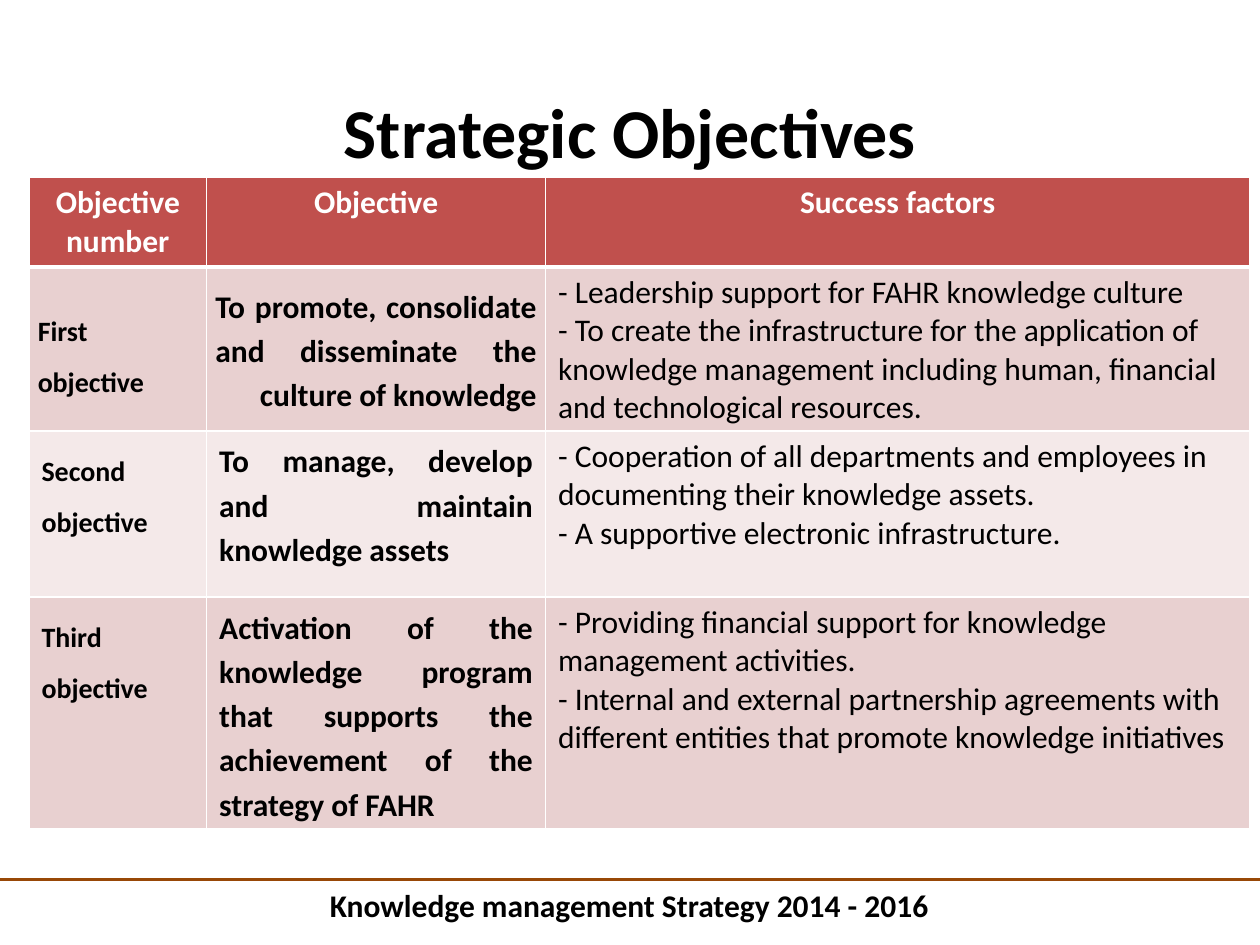
from lxml import etree
from pptx import Presentation
from pptx.dml.color import RGBColor
from pptx.enum.shapes import MSO_CONNECTOR
from pptx.enum.text import MSO_ANCHOR, MSO_AUTO_SIZE, PP_ALIGN
from pptx.oxml.ns import qn
from pptx.util import Inches, Pt

BLACK = RGBColor(0x00, 0x00, 0x00)
WHITE = RGBColor(0xFF, 0xFF, 0xFF)
BROWN = RGBColor(0x98, 0x48, 0x07)
RED = RGBColor(0xC0, 0x50, 0x4D)
ROSE = RGBColor(0xE8, 0xD0, 0xD0)
PALE = RGBColor(0xF4, 0xE9, 0xE9)

STRAIGHT = MSO_CONNECTOR.STRAIGHT
MIDDLE = MSO_ANCHOR.MIDDLE
GROW = MSO_AUTO_SIZE.SHAPE_TO_FIT_TEXT
LEFT, CENTER, JUSTIFY = PP_ALIGN.LEFT, PP_ALIGN.CENTER, PP_ALIGN.JUSTIFY

COLUMN_WIDTHS = [1.41, 2.69, 5.59]
ROW_HEIGHTS = [0.71, 1.3, 1.32, 1.84]
HEADINGS = ["Objective number", "Objective", "Success factors"]
OBJECTIVES = [
    ("First objective",
     "To promote, consolidate and disseminate the culture of knowledge",
     ["- Leadership support for FAHR knowledge culture",
      "- To create the infrastructure for the application of knowledge "
      "management including human, financial and technological resources."]),
    ("Second objective",
     "To manage, develop and maintain knowledge assets",
     ["- Cooperation of all departments and employees in documenting their "
      "knowledge assets.",
      "- A supportive electronic infrastructure."]),
    ("Third objective",
     "Activation of the knowledge program that supports the achievement of "
     "the strategy of FAHR",
     ["- Providing financial support for knowledge management activities.",
      "- Internal and external partnership agreements with different entities "
      "that promote knowledge initiatives"]),
]


def write(para, text, size=18, bold=True, color=BLACK, align=LEFT,
          spacing=None, after=None, indent=None, rtl=False):
    """Fill a paragraph with one formatted span."""
    properties = para._p.get_or_add_pPr()
    if indent is not None:
        properties.set("marL", "0")
        properties.set("indent", str(Inches(indent)))
    if rtl:
        properties.set("rtl", "1")
    para.alignment = align
    if spacing is not None:
        para.line_spacing = spacing
    if after is not None:
        para.space_after = Pt(after)
    span = para.add_run()
    span.text = text
    span.font.name = "Calibri"
    span.font.size = Pt(size)
    span.font.bold = bold
    span.font.color.rgb = color


def style_cell(cell, fill, top=1, bottom=1):
    """Give a cell white borders and a solid fill."""
    properties = cell._tc.get_or_add_tcPr()
    for side, width in (("L", 1), ("R", 1), ("T", top), ("B", bottom)):
        line = etree.SubElement(properties, qn(f"a:ln{side}"), w=str(Pt(width)))
        solid = etree.SubElement(line, qn("a:solidFill"))
        etree.SubElement(solid, qn("a:srgbClr"), val=str(WHITE))
    cell.fill.solid()
    cell.fill.fore_color.rgb = fill


def add_title(page, left, top, width, height):
    """Place the centred slide title."""
    box = page.shapes.add_textbox(left, top, width, height)
    box.text_frame.word_wrap = True
    box.text_frame.vertical_anchor = MIDDLE
    write(box.text_frame.paragraphs[0], "Strategic Objectives", size=40, align=CENTER)


def add_footer(page, left, top, width, height):
    """Place the rule across the slide and the strategy name below it."""
    box = page.shapes.add_textbox(left + Inches(2.52), top, Inches(5), height)
    box.text_frame.word_wrap = False
    box.text_frame.auto_size = GROW
    write(box.text_frame.paragraphs[0], "Knowledge management Strategy 2014 - 2016")
    rule = page.shapes.add_connector(STRAIGHT, left, top, left + width, top)
    rule.line.color.rgb = BROWN
    rule.line.width = Pt(2.25)
    etree.SubElement(rule._element.spPr, qn("a:effectLst"))


def add_objectives(page, left, top, width, height):
    """Place the table of objectives and their success factors."""
    table = page.shapes.add_table(len(ROW_HEIGHTS), len(COLUMN_WIDTHS),
                                  left, top, width, height).table
    for column, size in zip(table.columns, COLUMN_WIDTHS):
        column.width = Inches(size)
    for row, size in zip(table.rows, ROW_HEIGHTS):
        row.height = Inches(size)

    for index, heading in enumerate(HEADINGS):
        cell = table.cell(0, index)
        style_cell(cell, RED, bottom=3)
        write(cell.text_frame.paragraphs[0], heading, color=WHITE, align=CENTER,
              rtl=index < 2)

    for index, (number, objective, factors) in enumerate(OBJECTIVES, start=1):
        first = index == 1
        cells = [table.cell(index, column) for column in range(len(HEADINGS))]
        for cell in cells:
            style_cell(cell, ROSE if index % 2 else PALE, top=3 if first else 1)
        if first:
            for cell in cells[:2]:
                cell.vertical_anchor = MIDDLE
                cell.margin_left = cell.margin_right = Inches(0.07)
                cell.margin_top = cell.margin_bottom = 0
        write(cells[0].text_frame.paragraphs[0], number, size=16, spacing=1.5,
              indent=-0.31)
        write(cells[1].text_frame.paragraphs[0], objective, align=JUSTIFY,
              spacing=1.15, after=10, rtl=first)
        frame = cells[2].text_frame
        for position, factor in enumerate(factors):
            para = frame.add_paragraph() if position else frame.paragraphs[0]
            write(para, factor, bold=False)


def main():
    """Build and save the deck."""
    deck = Presentation()
    deck.slide_width, deck.slide_height = Inches(10), Inches(7.5)
    page = deck.slides.add_slide(deck.slide_layouts[6])
    add_footer(page, 0, Inches(6.98), deck.slide_width, Inches(0.4))
    add_title(page, Inches(0.5), Inches(0.52), Inches(9), Inches(1.03))
    add_objectives(page, Inches(0.23), Inches(1.41), Inches(sum(COLUMN_WIDTHS)),
                   Inches(sum(ROW_HEIGHTS)))
    deck.save("out.pptx")


if __name__ == "__main__":
    main()
